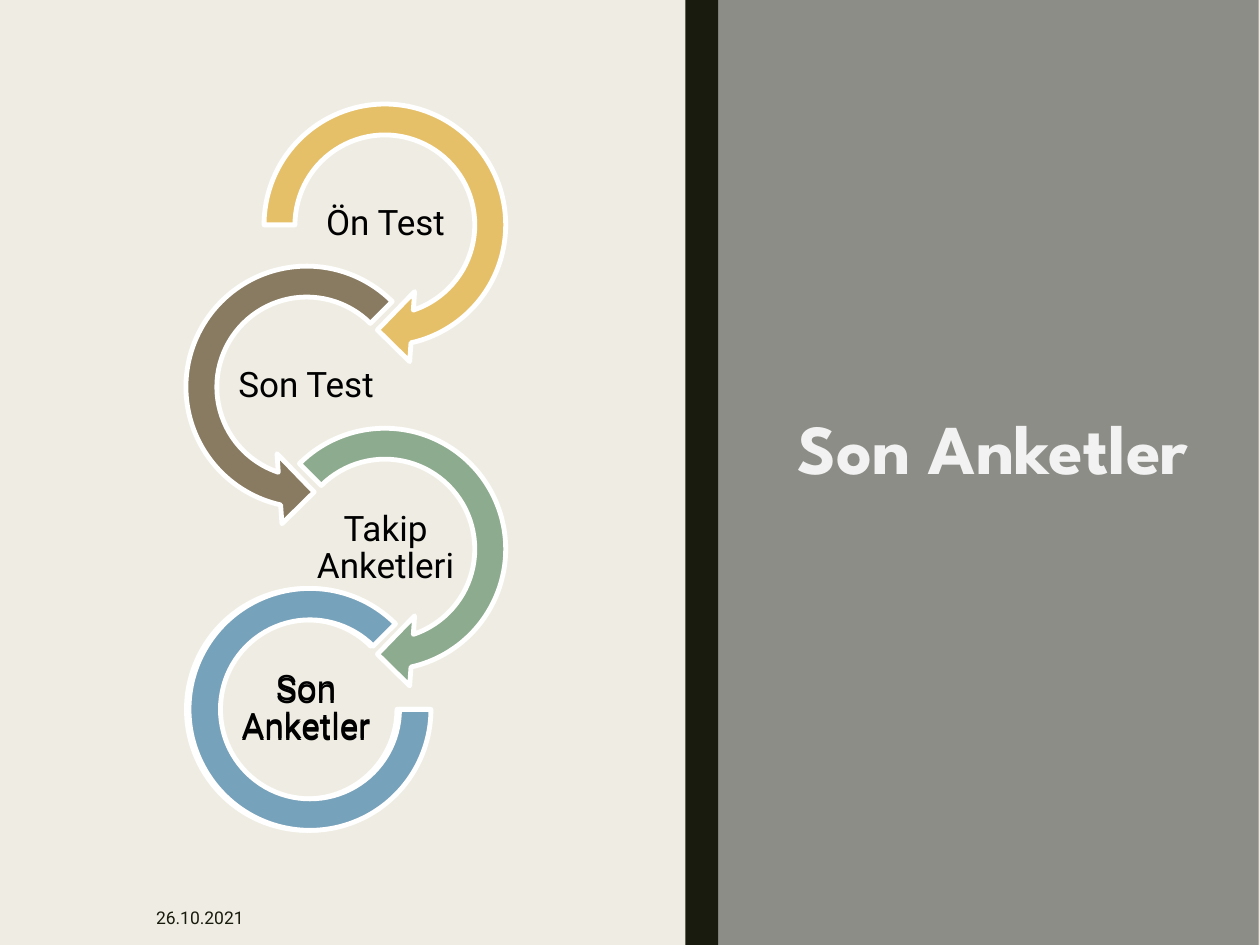
from dataclasses import dataclass

from pptx import Presentation
from pptx.dml.color import RGBColor
from pptx.enum.shapes import MSO_SHAPE as Shape
from pptx.enum.text import MSO_ANCHOR as Anchor, PP_ALIGN as Align
from pptx.util import Inches, Pt


@dataclass(frozen=True)
class Theme:
    background: str = "EFEDE3"
    panel: str = "8C8D86"
    dark: str = "191B0E"
    title: str = "F2F2F2"
    label: str = "000000"
    outline: str = "FFFFFF"
    gold: str = "E6C069"
    brown: str = "897B61"
    green: str = "8DAB8E"
    blue: str = "77A2BB"
    title_font: str = "League Spartan"
    body_font: str = "Roboto"
    title_size: float = 40
    label_size: float = 20
    date_size: float = 10
    outline_width: float = 2.75


class SlideBuilder:
    """Draws styled elements on the current slide."""

    def __init__(self, page, theme):
        self.page = page
        self.theme = theme

    def background(self):
        fill = self.page.background.fill
        fill.solid()
        fill.fore_color.rgb = RGBColor.from_string(self.theme.background)

    def shape(self, kind, place, color, adjustments=(), outlined=False):
        shape = self.page.shapes.add_shape(kind, *map(Inches, place))
        shape.shadow.inherit = False
        shape.fill.solid()
        shape.fill.fore_color.rgb = RGBColor.from_string(color)
        for index, value in enumerate(adjustments):
            shape.adjustments[index] = value
        if outlined:
            shape.line.color.rgb = RGBColor.from_string(self.theme.outline)
            shape.line.width = Pt(self.theme.outline_width)
        else:
            shape.line.fill.background()

    def text(self, words, place, size, color, font=None, bold=False,
             align=Align.CENTER, spacing=None, inset=None):
        box = self.page.shapes.add_textbox(*map(Inches, place))
        frame = box.text_frame
        frame.word_wrap = True
        frame.vertical_anchor = Anchor.MIDDLE
        if inset is not None:
            frame.margin_left = frame.margin_right = Inches(inset)
            frame.margin_top = frame.margin_bottom = Inches(inset)
        para = frame.paragraphs[0]
        para.text = words
        para.alignment = align
        para.line_spacing = spacing
        para.font.name = font or self.theme.body_font
        para.font.size = Pt(size)
        para.font.bold = bold
        para.font.color.rgb = RGBColor.from_string(color)

    def label(self, words, left, top):
        self.text(words, (left, top, 1.24, 0.62), self.theme.label_size,
                  self.theme.label, spacing=0.9, inset=0.01)

    def arrow(self, kind, left, top, color, head_angle, tail_angle):
        self.shape(kind, (left, top, 2.23, 2.23), color,
                   (0.11, 11.42, head_angle, tail_angle, 1 / 8), outlined=True)

    def arc(self, left, top, color):
        self.shape(Shape.BLOCK_ARC, (left, top, 1.92, 1.92), color,
                   (0, 189, 0.13), outlined=True)


def main():
    deck = Presentation()
    deck.slide_width, deck.slide_height = Inches(10), Inches(7.5)
    page = deck.slides.add_slide(deck.slide_layouts[6])
    theme = Theme()
    builder = SlideBuilder(page, theme)

    builder.background()
    builder.shape(Shape.RECTANGLE, (5.64, 0, 4.35, 7.5), theme.panel)
    builder.shape(Shape.RECTANGLE, (5.44, 0, 0.26, 7.5), theme.dark)
    builder.text("Son Anketler", (5.76, 2.42, 4.24, 2.36), theme.title_size,
                 theme.title, font=theme.title_font, bold=True, spacing=0.84)
    builder.text("26.10.2021", (1.14, 7.06, 0.99, 0.44), theme.date_size,
                 theme.dark, align=Align.LEFT)

    pitch = 3.86 / 3
    right, left = (1.94, 2.44), (1.32, 1.81)
    steps = [
        ("Ön Test", right, Shape.CIRCULAR_ARROW, theme.gold, 45, 108),
        ("Son Test", left, Shape.LEFT_CIRCULAR_ARROW, theme.brown, 63, 189),
        ("Takip Anketleri", right, Shape.CIRCULAR_ARROW, theme.green, 45, 135),
    ]
    for index, (words, (arrow_left, label_left), kind, color, head, tail) in enumerate(steps):
        offset = index * pitch
        builder.arrow(kind, arrow_left, 0.67 + offset, color, head, tail)
        builder.label(words, label_left, 1.47 + offset)

    for arc_left, label_top in ((1.48, 5.33), (1.5, 5.31)):
        builder.arc(arc_left, 4.67, theme.blue)
        builder.label("Son Anketler", 1.81, label_top)

    deck.save("out.pptx")


if __name__ == "__main__":
    main()
